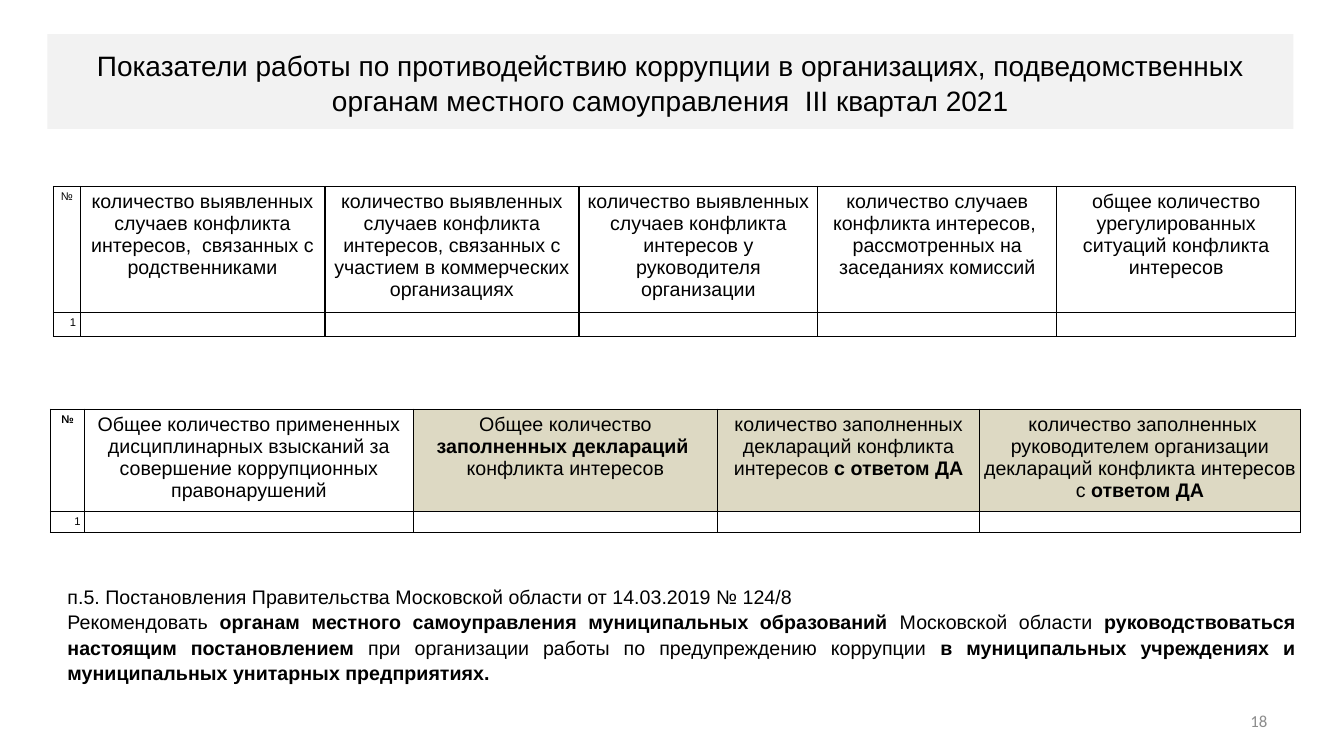
from dataclasses import dataclass
from typing import NamedTuple

from lxml.etree import SubElement
from pptx import Presentation
from pptx.dml.color import RGBColor
from pptx.enum.shapes import MSO_SHAPE
from pptx.enum.text import MSO_ANCHOR, PP_ALIGN
from pptx.oxml.ns import qn
from pptx.util import Emu, Inches, Pt

BLACK = RGBColor(0x00, 0x00, 0x00)
GREY = RGBColor(0x8C, 0x8C, 0x8C)
TITLE_BAND = RGBColor(0xF2, 0xF2, 0xF2)
DECLARATION = RGBColor(0xDD, 0xD9, 0xC3)

SLIDE_WIDTH, SLIDE_HEIGHT = Inches(13.33), Inches(7.5)
CELL_INSET = Inches(0.04)
BORDER_WIDTH = Pt(1)
LOOSE_LINES = 1.07


class Words(NamedTuple):
    text: str
    bold: bool = False


Paragraphs = list[list[Words]]


@dataclass
class Style:
    size: float
    align: PP_ALIGN = PP_ALIGN.CENTER
    font: str = "Arial"
    color: RGBColor = BLACK
    line_spacing: float = 1.0


class Place(NamedTuple):
    """Box in percent of the slide's width and height."""
    left: float
    top: float
    width: float
    height: float


@dataclass
class Indicator:
    """One table column: its width in percent and its heading."""
    width: float
    heading: Paragraphs
    fill: RGBColor | None = None
    size: float = 14


@dataclass
class IndicatorTable:
    left: float
    top: float
    row_heights: tuple[float, float]
    indicators: list[Indicator]


def across(percent: float) -> Emu:
    return Emu(round(SLIDE_WIDTH * percent / 100))


def down(percent: float) -> Emu:
    return Emu(round(SLIDE_HEIGHT * percent / 100))


def on_slide(place: Place) -> tuple[Emu, Emu, Emu, Emu]:
    return across(place.left), down(place.top), across(place.width), down(place.height)


def write(frame, paragraphs: Paragraphs, style: Style) -> None:
    frame.word_wrap = True
    for index, line in enumerate(paragraphs):
        paragraph = frame.add_paragraph() if index else frame.paragraphs[0]
        paragraph.alignment = style.align
        paragraph.line_spacing = style.line_spacing
        for words in line:
            run = paragraph.add_run()
            run.text = words.text
            run.font.size = Pt(style.size)
            run.font.name = style.font
            run.font.bold = words.bold
            run.font.color.rgb = style.color


def outline(cell) -> None:
    properties = cell._tc.get_or_add_tcPr()
    for side in ("a:lnL", "a:lnR", "a:lnT", "a:lnB"):
        line = SubElement(properties, qn(side), w=str(BORDER_WIDTH))
        SubElement(SubElement(line, qn("a:solidFill")), qn("a:srgbClr"), val=str(BLACK))


def prepare(cell, fill: RGBColor | None = None) -> None:
    cell.margin_left = cell.margin_right = CELL_INSET
    cell.margin_top = cell.margin_bottom = CELL_INSET
    outline(cell)
    if fill is None:
        cell.fill.background()
    else:
        cell.fill.solid()
        cell.fill.fore_color.rgb = fill


def draw_table(slide, plan: IndicatorTable) -> None:
    place = Place(plan.left, plan.top,
                  sum(indicator.width for indicator in plan.indicators),
                  sum(plan.row_heights))
    table = slide.shapes.add_table(2, len(plan.indicators), *on_slide(place)).table
    table.first_row = table.horz_banding = False
    for row, height in zip(table.rows, plan.row_heights):
        row.height = down(height)
    for index, indicator in enumerate(plan.indicators):
        table.columns[index].width = across(indicator.width)
        heading, value = table.cell(0, index), table.cell(1, index)
        prepare(heading, indicator.fill)
        prepare(value)
        write(heading.text_frame, indicator.heading, Style(indicator.size))
        if index == 0:
            write(value.text_frame, [[Words("1")]], Style(8, PP_ALIGN.RIGHT))
        else:
            # An empty cell takes its height from the paragraph end mark.
            SubElement(value.text_frame.paragraphs[0]._p, qn("a:endParaRPr"), sz="800")


def draw_text(slide, place: Place, paragraphs: Paragraphs, style: Style,
              anchor: MSO_ANCHOR = MSO_ANCHOR.TOP) -> None:
    frame = slide.shapes.add_textbox(*on_slide(place)).text_frame
    frame.vertical_anchor = anchor
    write(frame, paragraphs, style)


def draw_title(slide) -> None:
    band = slide.shapes.add_shape(MSO_SHAPE.RECTANGLE, *on_slide(Place(3.53, 4.53, 92.7, 12.53)))
    band.shadow.inherit = False
    band.fill.solid()
    band.fill.fore_color.rgb = TITLE_BAND
    band.line.fill.background()
    band.text_frame.vertical_anchor = MSO_ANCHOR.MIDDLE
    write(band.text_frame, [[Words(
        "Показатели работы по противодействию коррупции в организациях, "
        "подведомственных органам местного самоуправления  III квартал 2021")]],
        Style(20, line_spacing=LOOSE_LINES))


CONFLICTS = IndicatorTable(3.98, 24.67, (16.67, 3.2), [
    Indicator(1.98, [[Words("№")]], size=8),
    Indicator(18.22, [[Words("количество выявленных случаев конфликта интересов,  "
                             "связанных с родственниками")]]),
    Indicator(18.9, [[Words("количество выявленных случаев конфликта интересов, "
                            "связанных с участием в коммерческих организациях")]]),
    Indicator(17.78, [[Words("количество выявленных случаев конфликта интересов "
                             "у руководителя организации")]]),
    Indicator(17.78, [[Words("количество случаев конфликта интересов,  "
                             "рассмотренных на заседаниях комиссий")]]),
    Indicator(17.78, [[Words("общее количество урегулированных ситуаций "
                             "конфликта интересов")]]),
])

DECLARATIONS = IndicatorTable(3.75, 54.13, (12.67, 2.67), [
    Indicator(2.55, [[Words("№", True)]], size=8),
    Indicator(24.45, [[Words("Общее количество примененных дисциплинарных взысканий "
                             "за совершение коррупционных правонарушений")]]),
    Indicator(22.65, [[Words("Общее количество "), Words("заполненных деклараций ", True)],
                      [Words("конфликта интересов")]], DECLARATION),
    Indicator(19.5, [[Words("количество заполненных деклараций конфликта интересов "),
                      Words("с ответом ДА", True)]], DECLARATION),
    Indicator(23.85, [[Words(" количество заполненных руководителем организации "
                             "деклараций конфликта интересов с "),
                       Words("ответом ДА", True)]], DECLARATION),
])

RESOLUTION = [
    [Words("п.5. Постановления Правительства Московской области от 14.03.2019 № 124/8")],
    [Words("Рекомендовать "),
     Words("органам местного самоуправления муниципальных образований ", True),
     Words("Московской области "),
     Words("руководствоваться настоящим постановлением", True),
     Words(" при организации работы по предупреждению коррупции "),
     Words("в муниципальных учреждениях и муниципальных унитарных предприятиях.", True)],
]


def main() -> None:
    deck = Presentation()
    deck.slide_width, deck.slide_height = SLIDE_WIDTH, SLIDE_HEIGHT
    slide = deck.slides.add_slide(deck.slide_layouts[6])
    draw_title(slide)
    draw_text(slide, Place(71.7, 92.67, 23.33, 5.33), [[Words("18")]],
              Style(12, PP_ALIGN.RIGHT, "Calibri", GREY), MSO_ANCHOR.MIDDLE)
    for plan in (DECLARATIONS, CONFLICTS):
        draw_table(slide, plan)
    draw_text(slide, Place(4.28, 76.53, 92.85, 13.87), RESOLUTION,
              Style(14, PP_ALIGN.JUSTIFY, line_spacing=LOOSE_LINES))
    deck.save("out.pptx")


if __name__ == "__main__":
    main()
